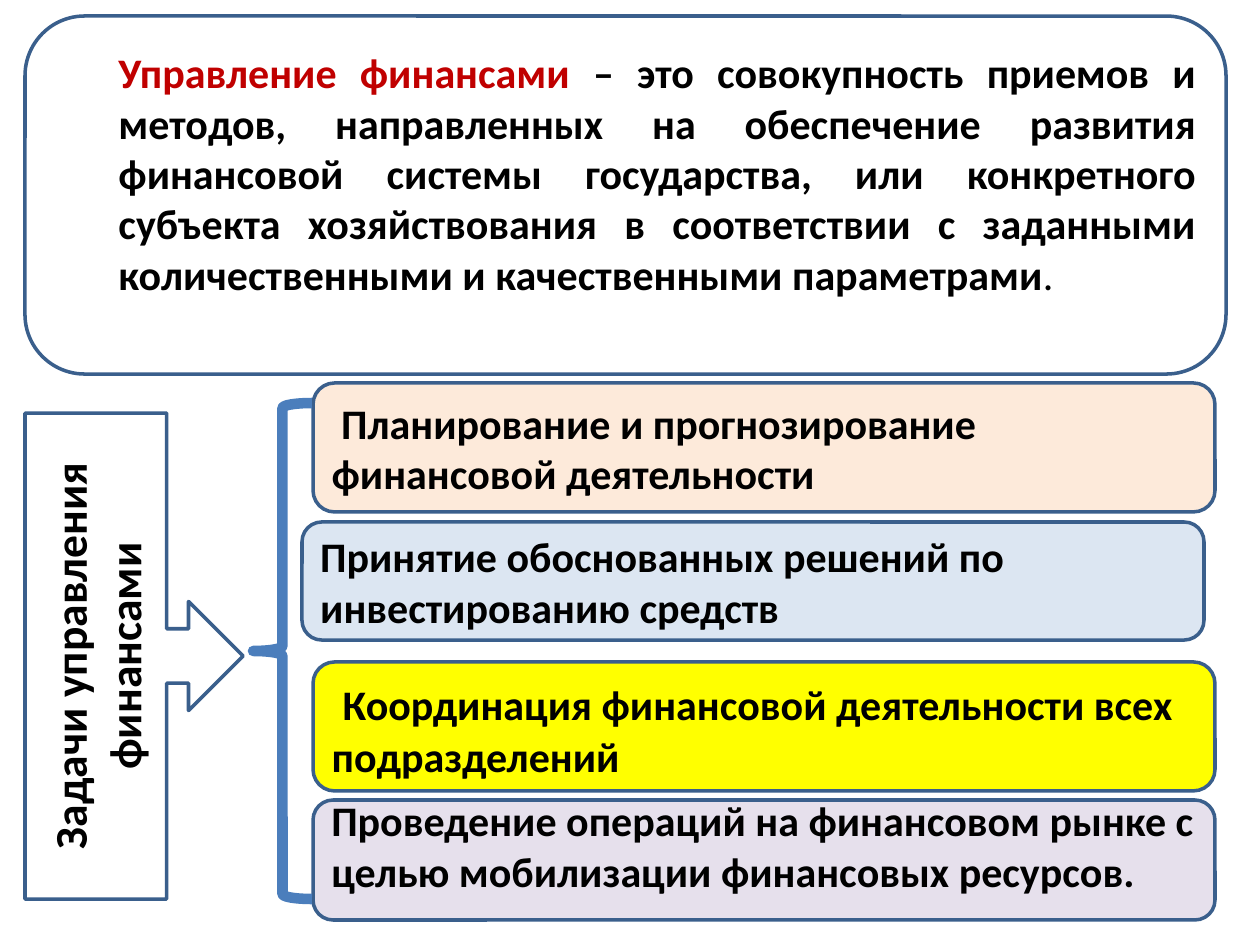
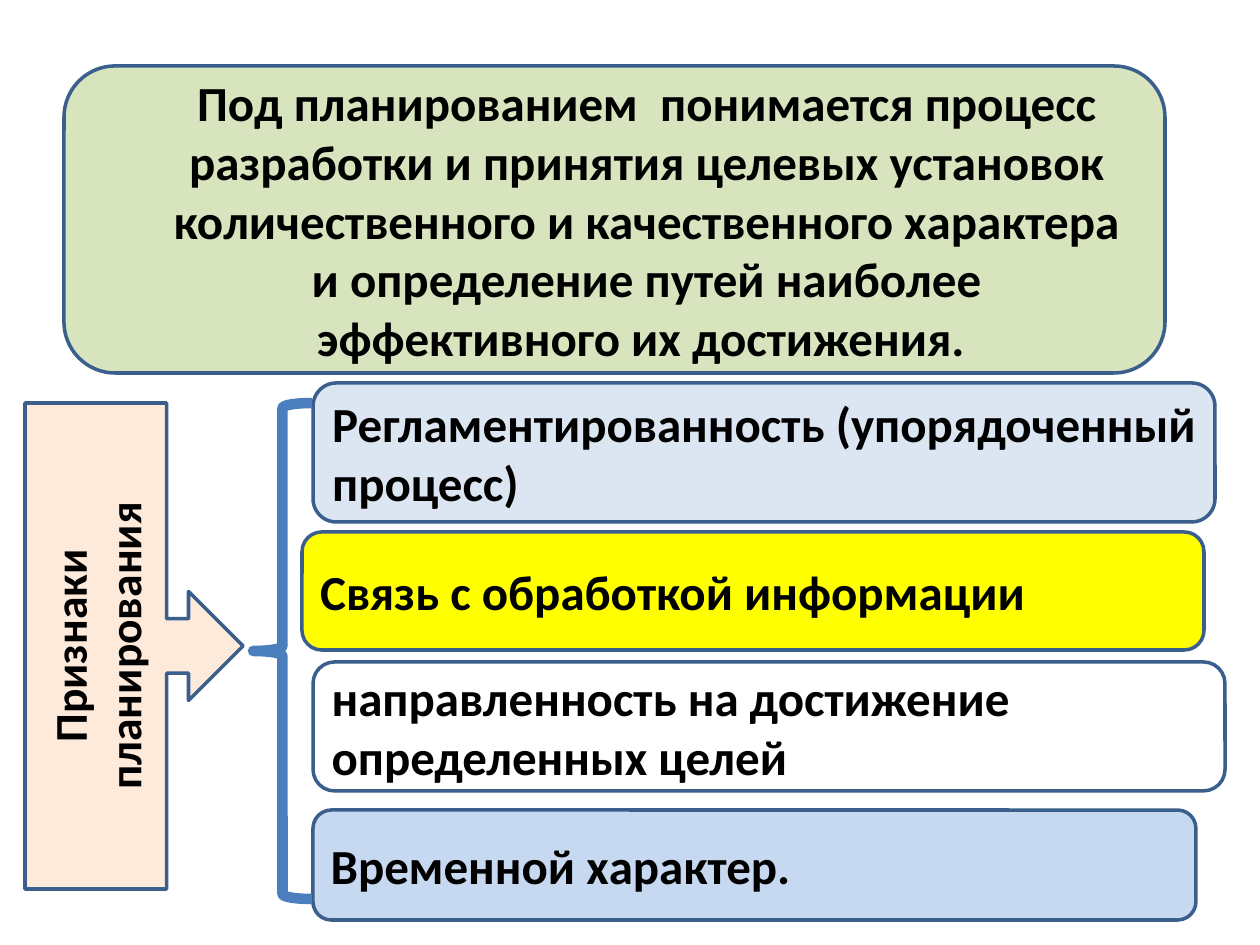
import pptx
import pptx.dml.color
import pptx.enum.shapes
import pptx.enum.text
import pptx.util

PX = 914400 / 126
SHAPE = pptx.enum.shapes.MSO_SHAPE
ALIGN = pptx.enum.text.PP_ALIGN
OUTLINE, BRACE_BLUE = "3A5F8C", "4B7EBC"
BLACK, WHITE, RED, YELLOW = "000000", "FFFFFF", "C00000", "FFFF00"
PEACH, PALE_BLUE, SKY, LILAC, GREEN = "FDEADA", "DCE6F2", "C6D9F1", "E6E0EC", "D7E4BD"
LEFT_EDGE, ITEM_LEFT, ITEM_WIDTH = 25, 313, 902
INDENT = 76


def rgb(value):
    return pptx.dml.color.RGBColor.from_string(value)


def add_panel(slide, kind, box, fill, runs, align=ALIGN.LEFT, **margins):
    """Add an outlined shape; runs are (text, size, colour, bold), margins in px."""
    panel = slide.shapes.add_shape(kind, *(round(n * PX) for n in box))
    panel.shadow.inherit = False
    panel.fill.solid()
    panel.fill.fore_color.rgb = rgb(fill)
    panel.line.color.rgb = rgb(OUTLINE)
    panel.line.width = pptx.util.Pt(2)
    frame = panel.text_frame
    frame.word_wrap = True
    frame.vertical_anchor = pptx.enum.text.MSO_ANCHOR.MIDDLE
    for side, length in margins.items():
        setattr(frame, "margin_" + side, round(length * PX))
    paragraph = frame.paragraphs[0]
    paragraph.alignment = align
    for text, size, colour, bold in runs:
        run = paragraph.add_run()
        run.text = text
        run.font.color.rgb = rgb(colour)
        look = {"name": "Calibri", "size": pptx.util.Pt(size), "bold": bold}
        for key, value in look.items():
            setattr(run.font, key, value)
    return panel


finance = {
    "definition": {
        "box": (LEFT_EDGE, 16, 1201, 358),
        "fill": WHITE,
        "align": ALIGN.JUSTIFY,
        "bottom": 51,
        "runs": [
            ("Управление финансами ", 24, RED, True),
            ("– это совокупность приемов и методов, направленных на обеспечение "
             "развития финансовой системы государства, или конкретного субъекта "
             "хозяйствования в соответствии с заданными количественными и "
             "качественными параметрами", 24, BLACK, True),
            (".", 24, BLACK, False),
        ],
    },
    "heading": ("Задачи управления финансами", 413, WHITE),
    # left, top, width, height, fill, bottom margin, runs
    "items": [
        (ITEM_LEFT, 383, ITEM_WIDTH, 129, PEACH, 6,
         [(" Планирование и прогнозирование финансовой деятельности", 24, BLACK, True)]),
        (ITEM_LEFT - 11, 522, ITEM_WIDTH, 118, PALE_BLUE, 6,
         [("Принятие обоснованных решений по инвестированию средств", 24, BLACK, True)]),
        (ITEM_LEFT, 662, ITEM_WIDTH, 129, YELLOW, 6,
         [(" ", 28, WHITE, False),
          ("Координация финансовой деятельности всех подразделений", 24, BLACK, True)]),
        (ITEM_LEFT, 800, ITEM_WIDTH, 120, LILAC, 36,
         [("Проведение операций на финансовом рынке с целью мобилизации "
           "финансовых ресурсов.", 24, BLACK, True)]),
    ],
}

planning = {
    "definition": {
        "box": (64, 66, 1101, 307),
        "fill": GREEN,
        "align": ALIGN.CENTER,
        "bottom": 6,
        "runs": [
            ("Под планированием  понимается процесс разработки и принятия целевых "
             "установок количественного и качественного характера и определение "
             "путей наиболее эффективного их достижения. ", 28, BLACK, True),
        ],
    },
    "heading": ("Признаки планирования", 403, PEACH),
    "items": [
        (ITEM_LEFT, 383, ITEM_WIDTH, 139, PALE_BLUE, 6,
         [("Регламентированность (упорядоченный процесс)", 28, BLACK, True)]),
        (ITEM_LEFT - 11, 532, ITEM_WIDTH, 118, YELLOW, 6,
         [("Связь с обработкой информации", 28, BLACK, True)]),
        (ITEM_LEFT, 662, 912, 129, WHITE, 6,
         [("направленность на достижение определенных целей", 28, BLACK, True)]),
        (ITEM_LEFT, 810, 883, 110, SKY, 6,
         [("Временной характер.", 28, BLACK, True)]),
    ],
}

deck = pptx.Presentation()
deck.slide_width = round(1260 * PX)
deck.slide_height = round(945 * PX)

for topic in (finance, planning):
    slide = deck.slides.add_slide(deck.slide_layouts[6])

    definition = topic["definition"]
    add_panel(slide, SHAPE.ROUNDED_RECTANGLE, definition["box"], definition["fill"],
              definition["runs"], definition["align"],
              left=INDENT, bottom=definition["bottom"])

    heading, top, fill = topic["heading"]
    callout = add_panel(slide, SHAPE.RIGHT_ARROW_CALLOUT, (LEFT_EDGE, top, 218, 486),
                        fill, [(heading, 26, BLACK, True)], ALIGN.CENTER)
    callout.text_frame._txBody.bodyPr.set("vert", "vert270")

    for *box, fill, bottom, runs in topic["items"]:
        add_panel(slide, SHAPE.ROUNDED_RECTANGLE, box, fill, runs, bottom=bottom)

    brace = slide.shapes.add_shape(
        SHAPE.LEFT_BRACE, *(round(n * PX) for n in (253, 403, 59, 496)))
    brace.shadow.inherit = False
    brace.fill.background()
    brace.line.color.rgb = rgb(BRACE_BLUE)
    brace.line.width = pptx.util.Pt(6)

deck.save("out.pptx")
